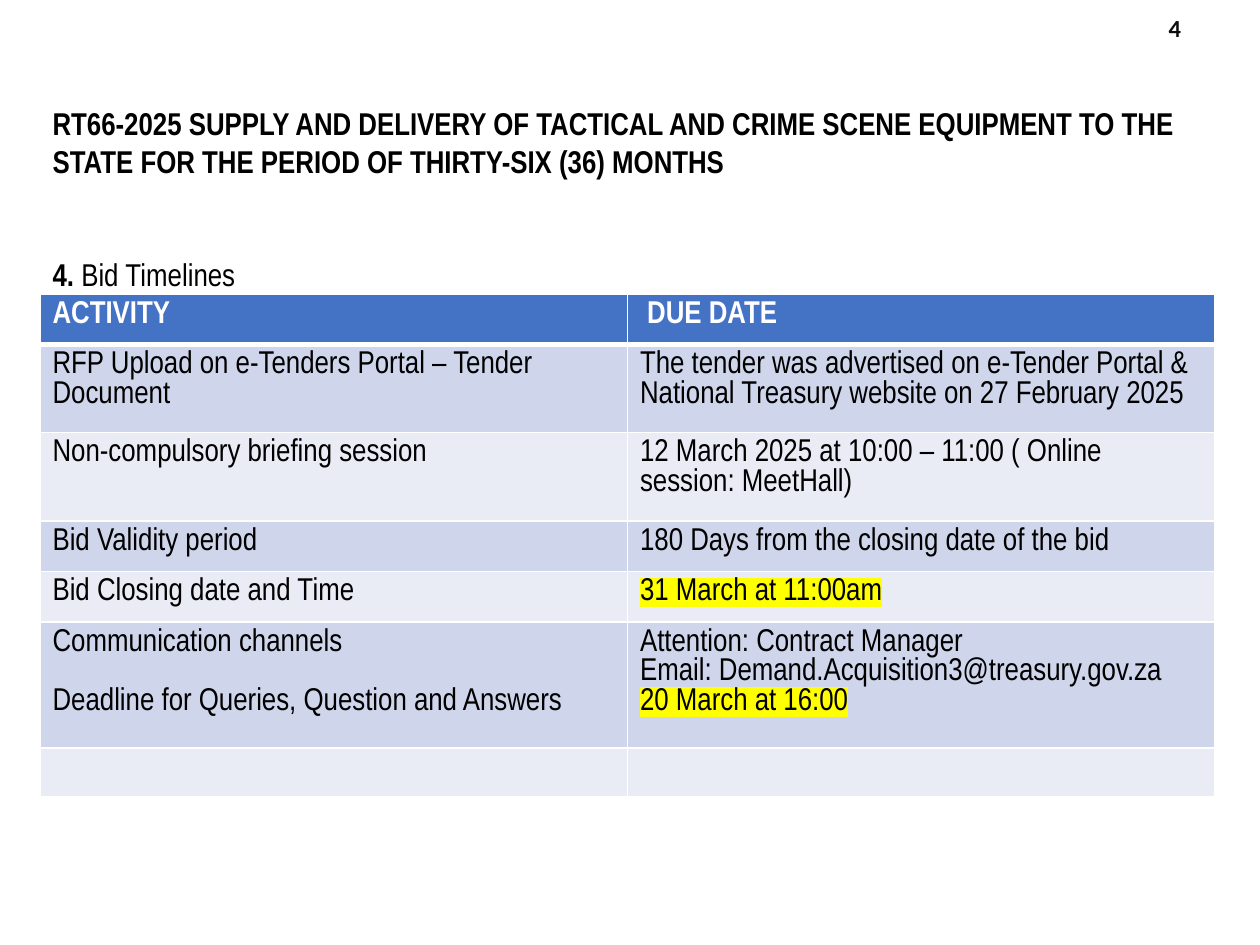
from dataclasses import dataclass

from lxml import etree
from pptx import Presentation
from pptx.dml.color import RGBColor
from pptx.enum.text import MSO_ANCHOR, MSO_AUTO_SIZE, PP_ALIGN
from pptx.oxml.ns import qn
from pptx.util import Emu, Pt

PX_PER_INCH = 126
TITLE_ONLY = 5
LEFT, RIGHT = PP_ALIGN.LEFT, PP_ALIGN.RIGHT
TOP, MIDDLE = MSO_ANCHOR.TOP, MSO_ANCHOR.MIDDLE
NO_AUTOFIT = MSO_AUTO_SIZE.NONE

BLACK, WHITE, YELLOW = "000000", "FFFFFF", "FFFF00"
HEADER_FILL = "4472C4"
BAND_FILLS = ("CFD5EA", "E9EBF5")


@dataclass
class Line:
    text: str
    highlight: str = ""
    space_before: int = 0


@dataclass
class Row:
    height: int
    activity: tuple = ()
    due_date: tuple = ()


ROWS = [
    Row(48, (Line("ACTIVITY"),), (Line(" DUE DATE"),)),
    Row(78, (Line("RFP Upload on e-Tenders Portal – Tender Document"),),
        (Line("The tender was advertised on e-Tender Portal & "
              "National Treasury website on 27 February 2025"),)),
    Row(72, (Line("Non-compulsory briefing session"),),
        (Line("12 March 2025 at 10:00 – 11:00 ( Online session: MeetHall)"),)),
    Row(48, (Line("Bid Validity period"),),
        (Line("180 Days from the closing date of the bid"),)),
    Row(49, (Line("Bid Closing date and Time"),),
        (Line("31 March at 11:00am", YELLOW),)),
    Row(111, (Line("Communication channels"),
              Line("Deadline for Queries, Question and Answers", space_before=17)),
        (Line("Attention: Contract Manager"),
         Line("Email: Demand.Acquisition3@treasury.gov.za"),
         Line("20 March at 16:00", YELLOW))),
    Row(49),
]


def px(length: int) -> Emu:
    return Emu(round(length * 914400 / PX_PER_INCH))


def rgb(color: str) -> RGBColor:
    return RGBColor.from_string(color)


def set_format(target, values: dict) -> None:
    for name, value in values.items():
        setattr(target, name, value)


def add_run(paragraph, text: str, color: str = BLACK, bold: bool = False,
            size: int = 18, face: str = "Arial Narrow", highlight: str = "") -> None:
    run = paragraph.add_run()
    run.text = text
    set_format(run.font, {"size": Pt(size), "bold": bold, "name": face})
    run.font.color.rgb = rgb(color)
    if highlight:
        mark = etree.Element(qn("a:highlight"))
        etree.SubElement(mark, qn("a:srgbClr"), val=highlight)
        run.font._element.find(qn("a:solidFill")).addnext(mark)


def add_borders(cell, widths: dict) -> None:
    properties = cell._tc.get_or_add_tcPr()
    for side, points in widths.items():
        border = etree.SubElement(properties, qn(f"a:ln{side}"), w=str(Pt(points)))
        fill = etree.SubElement(border, qn("a:solidFill"))
        etree.SubElement(fill, qn("a:srgbClr"), val=WHITE)


def fill_cell(cell, lines: tuple, row_index: int) -> None:
    is_header = row_index == 0
    add_borders(cell, {"L": 1, "R": 1, "T": 3 if row_index == 1 else 1,
                       "B": 3 if is_header else 1})
    cell.fill.solid()
    fill = HEADER_FILL if is_header else BAND_FILLS[(row_index - 1) % 2]
    cell.fill.fore_color.rgb = rgb(fill)
    if not lines:
        # An empty cell must not stretch its row
        set_format(cell, {"margin_top": 0, "margin_bottom": 0})
    frame = cell.text_frame
    for index, line in enumerate(lines):
        paragraph = frame.add_paragraph() if index else frame.paragraphs[0]
        if line.space_before:
            paragraph.space_before = Pt(line.space_before)
        add_run(paragraph, line.text, WHITE if is_header else BLACK,
                bold=is_header, highlight=line.highlight)


def add_title(slide) -> None:
    title = slide.shapes.title
    set_format(title, {"left": px(40), "top": px(86),
                       "width": px(1177), "height": px(141)})
    frame = title.text_frame
    set_format(frame, {"word_wrap": True, "auto_size": NO_AUTOFIT,
                       "vertical_anchor": TOP, "margin_top": px(18)})
    tender = frame.paragraphs[0]
    set_format(tender, {"alignment": LEFT, "space_after": Pt(43)})
    add_run(tender, "RT66-2025 SUPPLY AND DELIVERY OF TACTICAL AND CRIME SCENE "
                    "EQUIPMENT TO THE STATE FOR THE PERIOD OF THIRTY-SIX (36) MONTHS",
            bold=True)
    section = frame.add_paragraph()
    section.alignment = LEFT
    add_run(section, "4. ", bold=True)
    add_run(section, "Bid Timelines")


def add_page_number(slide) -> None:
    box = slide.shapes.add_textbox(px(1147), px(0), px(55), px(56))
    frame = box.text_frame
    set_format(frame, {"word_wrap": True, "vertical_anchor": MIDDLE,
                       "margin_right": px(21)})
    number = frame.paragraphs[0]
    number.alignment = RIGHT
    add_run(number, "4", "0D0D0D", bold=True, size=14, face="Calibri")


def add_timeline(slide) -> None:
    height = sum(row.height for row in ROWS)
    table = slide.shapes.add_table(len(ROWS), 2, px(40), px(294),
                                   px(1175), px(height)).table
    for row_index, row in enumerate(ROWS):
        table.rows[row_index].height = px(row.height)
        for column, lines in enumerate((row.activity, row.due_date)):
            fill_cell(table.cell(row_index, column), lines, row_index)


def main() -> None:
    presentation = Presentation()
    set_format(presentation, {"slide_width": px(1260), "slide_height": px(945)})
    slide = presentation.slides.add_slide(presentation.slide_layouts[TITLE_ONLY])
    # Heading and page number
    add_page_number(slide)
    add_title(slide)
    # Bid timeline
    add_timeline(slide)
    presentation.save("out.pptx")


if __name__ == "__main__":
    main()
